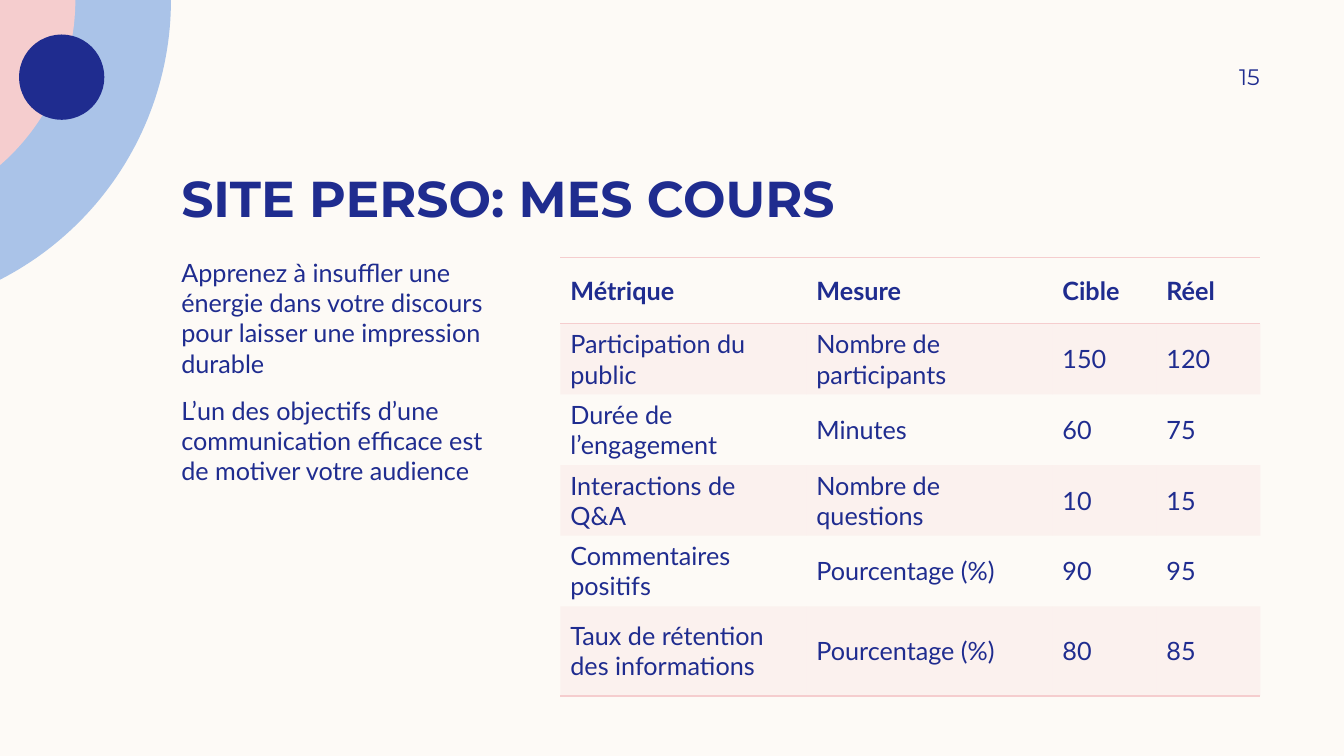
from dataclasses import dataclass
from math import acos, cos, sin

from lxml.etree import SubElement
from pptx import Presentation
from pptx.dml.color import RGBColor
from pptx.enum.shapes import MSO_SHAPE
from pptx.enum.text import MSO_ANCHOR, PP_ALIGN
from pptx.oxml import parse_xml
from pptx.oxml.ns import nsdecls, qn
from pptx.util import Cm, Pt


@dataclass(frozen=True)
class Theme:
    """Colours, fonts and type sizes of the slide."""

    cream: str = "FDFAF6"
    navy: str = "1F2C8F"
    blue: str = "AAC3E8"
    pink: str = "F5CDCE"
    head: str = "Montserrat"
    text: str = "Lato"
    big: int = 36
    mid: int = 18
    small: int = 16


LOOK = Theme()
PLAIN = "{2D5ABB26-0587-4C30-8999-92F81FD0307C}"
COLS = (6.2, 6.2, 2.62, 2.62)
ROWS = (1.68, 1.68, 1.78, 1.68, 1.68, 2.26)
DATA = (
    ("Métrique", "Mesure", "Cible", "Réel"),
    ("Participation du public", "Nombre de participants", "150", "120"),
    ("Durée de l’engagement", "Minutes", "60", "75"),
    ("Interactions de Q&A", "Nombre de questions", "10", "15"),
    ("Commentaires positifs", "Pourcentage (%)", "90", "95"),
    ("Taux de rétention des informations", "Pourcentage (%)", "80", "85"),
)
BODY = (
    "Apprenez à insuffler une énergie dans votre discours pour laisser "
    "une impression durable",
    "L’un des objectifs d’une communication efficace est de motiver "
    "votre audience",
)


def apply(item, form):
    """Set each attribute named in the dict on the item."""
    for name, value in form.items():
        setattr(item, name, value)


def paint(shape, tone):
    """Give a shape a flat fill with no line or shadow."""
    shape.fill.solid()
    shape.fill.fore_color.rgb = RGBColor.from_string(tone)
    shape.line.fill.background()
    shape.shadow.inherit = False


def write(para, text, face, size, bold=False):
    """Add one navy run to a paragraph."""
    run = para.add_run()
    run.text = text
    apply(run.font, {"name": face, "size": Pt(size), "bold": bold})
    run.font.color.rgb = RGBColor.from_string(LOOK.navy)


def add_text(slide, box, lines, font, frame, para):
    """Add a text box with one paragraph for each line."""
    body = slide.shapes.add_textbox(*map(Cm, box)).text_frame
    apply(body, {"word_wrap": True, "margin_top": 0, "margin_bottom": 0, **frame})
    for i, line in enumerate(lines):
        part = body.add_paragraph() if i else body.paragraphs[0]
        apply(part, para)
        write(part, line, *font)


def add_disc(slide, reach, tone, mid=-3.61, steps=48):
    """Draw the part of a disc, centred on the top edge, that is on the slide."""
    turn = acos(-mid / reach) / steps
    arc = [
        (Cm(mid + reach * cos(i * turn)), Cm(reach * sin(i * turn)))
        for i in range(steps + 1)
    ]
    form = slide.shapes.build_freeform(0, 0)
    form.add_line_segments(arc, close=True)
    paint(form.convert_to_shape(), tone)


def add_dot(slide, box, tone):
    """Draw a plain circle."""
    paint(slide.shapes.add_shape(MSO_SHAPE.OVAL, *map(Cm, box)), tone)


def tint(cell, tone, share):
    """Fill a cell with a partly clear colour."""
    cell.fill.solid()
    cell.fill.fore_color.rgb = RGBColor.from_string(tone)
    color = cell._tc.tcPr.find(".//" + qn("a:srgbClr"))
    SubElement(color, qn("a:alpha")).set("val", str(share * 1000))


def rule(cell, sides):
    """Draw thin pink borders on the given sides of a cell."""
    for i, side in enumerate(sides):
        line = parse_xml(
            f'<a:ln{side} {nsdecls("a")} w="{Pt(1)}"><a:solidFill>'
            f'<a:srgbClr val="{LOOK.pink}"/></a:solidFill></a:ln{side}>'
        )
        cell._tc.get_or_add_tcPr().insert(i, line)


def add_grid(slide, left, top):
    """Add the table of measures with tinted odd rows."""
    size = (left, top, sum(COLS), sum(ROWS))
    grid = slide.shapes.add_table(len(ROWS), len(COLS), *map(Cm, size)).table
    apply(grid, {"first_row": False, "horz_banding": False})
    grid._tbl.tblPr.find(qn("a:tableStyleId")).text = PLAIN
    for col, width in zip(grid.columns, COLS):
        col.width = Cm(width)
    edges = {0: "TB", len(ROWS) - 1: "B"}
    for r, texts in enumerate(DATA):
        grid.rows[r].height = Cm(ROWS[r])
        for c, text in enumerate(texts):
            cell = grid.cell(r, c)
            cell.vertical_anchor = MSO_ANCHOR.MIDDLE
            write(cell.text_frame.paragraphs[0], text, LOOK.text, LOOK.mid, r == 0)
            if r % 2:
                tint(cell, LOOK.pink, 20)
            else:
                cell.fill.background()
            rule(cell, edges.get(r, ""))


def main():
    """Build the slide and save it."""
    deck = Presentation()
    apply(deck, {"slide_width": Cm(33.87), "slide_height": Cm(19.05)})
    slide = deck.slides.add_slide(deck.slide_layouts[6])
    slide.background.fill.solid()
    slide.background.fill.fore_color.rgb = RGBColor.from_string(LOOK.cream)

    add_disc(slide, 7.92, LOOK.blue)
    add_disc(slide, 5.51, LOOK.pink)
    add_dot(slide, (0.48, 0.87, 2.15, 2.15), LOOK.navy)
    add_text(
        slide, (4.32, 3.02, 27.43, 2.72), ["SITE PERSO: MES COURS"],
        (LOOK.head, LOOK.big, True), {"vertical_anchor": MSO_ANCHOR.BOTTOM}, {},
    )
    add_text(
        slide, (4.32, 6.48, 8.26, 10.29), BODY,
        (LOOK.text, LOOK.mid), {}, {"space_after": Pt(12)},
    )
    add_grid(slide, 14.12, 6.48)
    add_text(
        slide, (28.78, 1.27, 2.97, 1.32), ["15"], (LOOK.head, LOOK.small),
        {"vertical_anchor": MSO_ANCHOR.MIDDLE, "margin_right": 0},
        {"alignment": PP_ALIGN.RIGHT},
    )
    deck.save("out.pptx")


if __name__ == "__main__":
    main()
